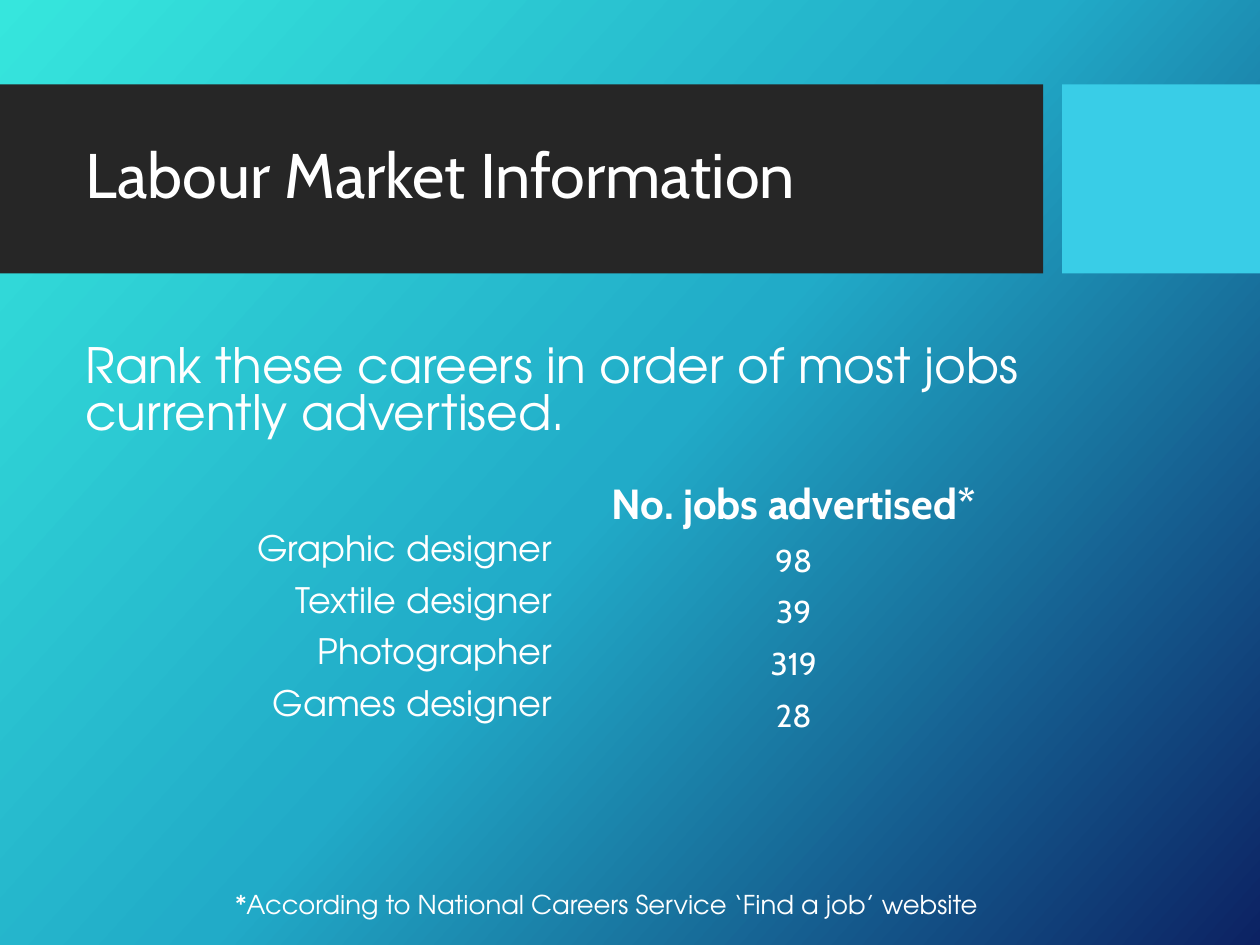
from copy import deepcopy

from pptx import Presentation
from pptx import util as u
from pptx.dml.color import RGBColor
from pptx.enum import shapes, text
from pptx.oxml.ns import qn

COLORS = {
    "white": "FFFFFF",
    "banner": "262626",
    "accent": "39CDE7",
    "gradient": ["36E6DD", "21ABC8", "0C2263"],
}
HEADING_FONT = "Cabin"
BODY_FONT = "TeX Gyre Adventor"
NO_TABLE_STYLE = "{2D5ABB26-0587-4C30-8999-92F81FD0307C}"
LEFT, CENTER, RIGHT = text.PP_ALIGN.LEFT, text.PP_ALIGN.CENTER, text.PP_ALIGN.RIGHT


def inches(*values):
    return [u.Inches(value) for value in values]


class SlideBuilder:
    def __init__(self, slide):
        self.slide = slide

    def background(self, colors, angle):
        fill = self.slide.background.fill
        fill.gradient()
        fill.gradient_angle = 360 - angle  # python-pptx counts counter-clockwise
        stop_list = next(self.slide.element.iter(qn("a:gsLst")))
        while len(stop_list) < len(colors):
            stop_list.append(deepcopy(stop_list[0]))
        for index, (stop, color) in enumerate(zip(fill.gradient_stops, colors)):
            stop.position = index / (len(colors) - 1)
            stop.color.rgb = RGBColor.from_string(color)

    def bar(self, left, top, width, height, color):
        shape = self.slide.shapes.add_shape(
            shapes.MSO_SHAPE.RECTANGLE, *inches(left, top, width, height))
        shape.shadow.inherit = False
        shape.fill.solid()
        shape.fill.fore_color.rgb = RGBColor.from_string(color)
        shape.line.fill.background()

    def set_text(self, text_frame, words, size, font, align=LEFT, spacing=None, bold=False):
        text_frame.text = words
        paragraph = text_frame.paragraphs[0]
        paragraph.alignment = align
        paragraph.line_spacing = spacing
        for run in paragraph.runs:
            run.font.name = font
            run.font.size = u.Pt(size)
            run.font.bold = bold
            run.font.color.rgb = RGBColor.from_string(COLORS["white"])

    def title(self, words, left, top, width, height):
        title = self.slide.shapes.title
        title.left, title.top, title.width, title.height = inches(left, top, width, height)
        title.text_frame.vertical_anchor = text.MSO_ANCHOR.MIDDLE
        self.set_text(title.text_frame, words, 36, HEADING_FONT, spacing=0.9)
        # Bring the title in front of the banner
        title.element.getparent().append(title.element)

    def text_box(self, words, left, top, width, height, size, spacing=None):
        box = self.slide.shapes.add_textbox(*inches(left, top, width, height))
        box.text_frame.word_wrap = True
        self.set_text(box.text_frame, words, size, BODY_FONT, spacing=spacing)

    def jobs_table(self, header, jobs, left, top, width, row_height):
        rows = len(jobs) + 1
        table = self.slide.shapes.add_table(
            rows, 2, *inches(left, top, width, row_height * rows)).table
        table.first_row = table.horz_banding = False
        table._tbl.tblPr.find(qn("a:tableStyleId")).text = NO_TABLE_STYLE
        for cell in table.iter_cells():
            cell.fill.background()
        self.set_text(table.cell(0, 1).text_frame, header, 24, HEADING_FONT, CENTER, bold=True)
        for row, (career, count) in enumerate(jobs, start=1):
            career_cell = table.cell(row, 0)
            career_cell.margin_top = career_cell.margin_bottom = 0
            self.set_text(career_cell.text_frame, career, 20, BODY_FONT, RIGHT)
            self.set_text(table.cell(row, 1).text_frame, str(count), 18, HEADING_FONT, CENTER)


def main():
    presentation = Presentation()
    presentation.slide_width, presentation.slide_height = inches(10, 7.5)
    slide = presentation.slides.add_slide(presentation.slide_layouts[5])
    builder = SlideBuilder(slide)

    # Background and banner
    builder.background(COLORS["gradient"], 42)
    builder.bar(0, 0.67, 8.28, 1.5, COLORS["banner"])
    builder.bar(8.43, 0.67, 1.57, 1.5, COLORS["accent"])
    builder.title("Labour Market Information", 0.58, 0.82, 7.54, 1.18)

    # Task
    builder.text_box("Rank these careers in order of most jobs currently advertised.",
                     0.58, 2.7, 8.58, 0.9, 27.8, spacing=0.8)

    # Careers and job counts
    jobs = [
        ("Graphic designer", 98),
        ("Textile designer", 39),
        ("Photographer", 319),
        ("Games designer", 28),
    ]
    builder.jobs_table("No. jobs advertised*", jobs, 0.84, 3.75, 7.28, 0.41)

    # Footnote
    builder.text_box("*According to National Careers Service ‘Find a job’ website",
                     1.77, 7, 7.39, 0.4, 14.8)

    presentation.save("out.pptx")


if __name__ == "__main__":
    main()
